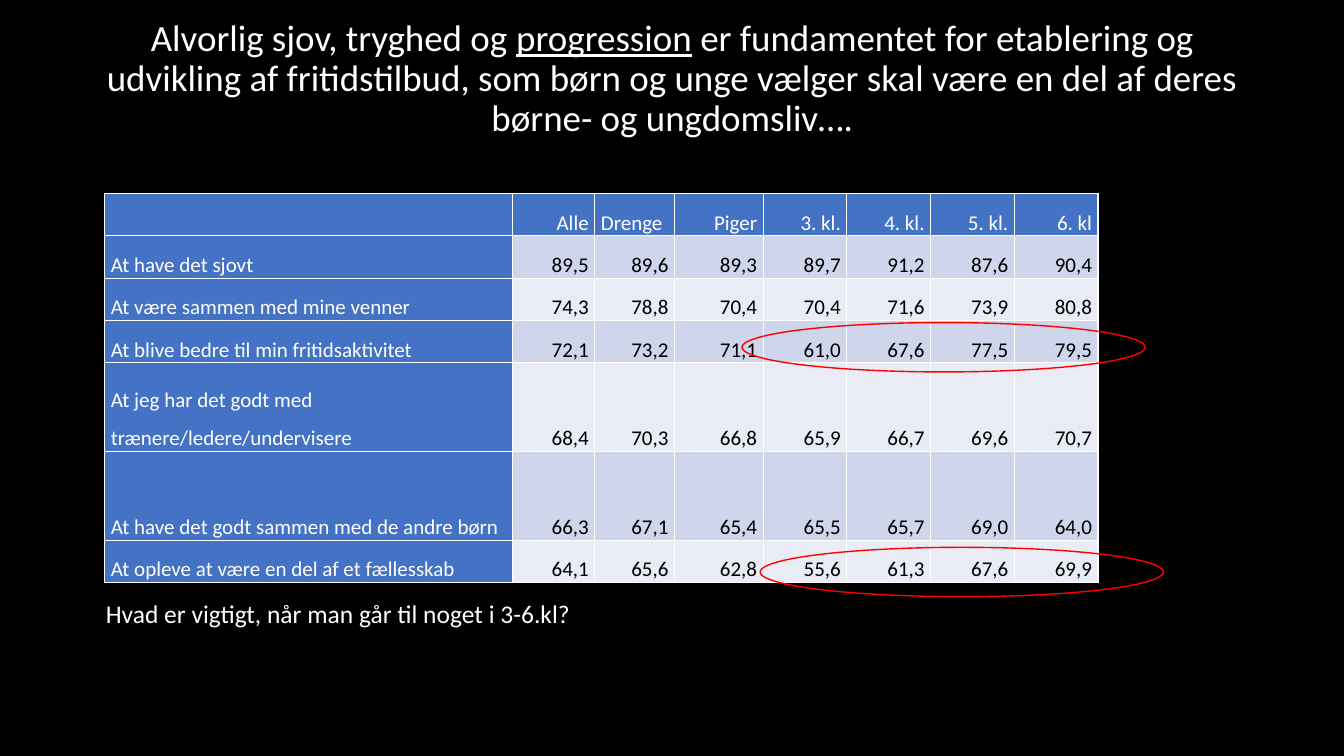
"""Build a slide with a table of what children value in leisure activities."""
from lxml import etree
from pptx import Presentation
from pptx.dml.color import RGBColor
from pptx.enum.shapes import MSO_SHAPE
from pptx.enum.text import MSO_ANCHOR, MSO_AUTO_SIZE, PP_ALIGN
from pptx.oxml.ns import qn
from pptx.util import Inches, Pt

OVAL = MSO_SHAPE.OVAL
MIDDLE, BOTTOM = MSO_ANCHOR.MIDDLE, MSO_ANCHOR.BOTTOM
LEFT, CENTER, RIGHT = PP_ALIGN.LEFT, PP_ALIGN.CENTER, PP_ALIGN.RIGHT
FIXED = MSO_AUTO_SIZE.NONE

COLORS = {"black": "000000", "white": "FFFFFF", "blue": "4472C4",
          "dark": "CFD5EA", "light": "E9EBF5", "red": "FF0000"}

TITLE = [("Alvorlig sjov, tryghed og ", False), ("progression", True),
         (" er fundamentet for etablering og udvikling af fritidstilbud, som børn "
          "og unge vælger skal være en del af deres børne- og ungdomsliv….", False)]
HEADS = ["", "Alle", "Drenge", "Piger", "3. kl.", "4. kl.", "5. kl.", "6. kl"]
ROWS = [
    ("At have det sjovt", "89,5 89,6 89,3 89,7 91,2 87,6 90,4"),
    ("At være sammen med mine venner", "74,3 78,8 70,4 70,4 71,6 73,9 80,8"),
    ("At blive bedre til min fritidsaktivitet", "72,1 73,2 71,1 61,0 67,6 77,5 79,5"),
    ("At jeg har det godt med trænere/ledere/undervisere",
     "68,4 70,3 66,8 65,9 66,7 69,6 70,7"),
    ("At have det godt sammen med de andre børn",
     "66,3 67,1 65,4 65,5 65,7 69,0 64,0"),
    ("At opleve at være en del af et fællesskab",
     "64,1 65,6 62,8 55,6 61,3 67,6 69,9"),
]
WIDTHS = [30.31, 6.15, 5.93, 6.6] + [6.23] * 4
HEIGHTS = [5.6] * 4 + [11.75] * 2 + [5.6]


def color(name):
    """Return the named colour."""
    return RGBColor.from_string(COLORS[name])


def apply(obj, values):
    """Set each attribute in values on obj."""
    for key, value in values.items():
        setattr(obj, key, value)


class Deck:
    """Hold the font and slide; lengths are percent of the slide's size."""

    def __init__(self, font):
        """Start a deck with one black title-only slide."""
        self.font = font
        self.deck = Presentation()
        apply(self.deck, {"slide_width": Inches(13.33), "slide_height": Inches(7.5)})
        self.slide = self.deck.slides.add_slide(self.deck.slide_layouts[5])
        fill = self.slide.background.fill
        fill.solid()
        fill.fore_color.rgb = color("black")

    def wide(self, share):
        """Turn a share of the width into a length."""
        return round(self.deck.slide_width * share / 100)

    def high(self, share):
        """Turn a share of the height into a length."""
        return round(self.deck.slide_height * share / 100)

    def box(self, x, y, w, h):
        """Turn four shares into a position and size."""
        return self.wide(x), self.high(y), self.wide(w), self.high(h)

    def words(self, frame, runs, size, ink="white", **style):
        """Fill the first paragraph of a frame with (text, underline) runs."""
        para = frame.paragraphs[0]
        apply(para, style)
        for text, line in runs:
            run = para.add_run()
            run.text = text
            apply(run.font, {"name": self.font, "size": Pt(size),
                             "bold": False, "underline": line})
            run.font.color.rgb = color(ink)

    def title(self, spot, runs):
        """Place and fill the title placeholder."""
        shape = self.slide.shapes.title
        apply(shape, dict(zip(("left", "top", "width", "height"), self.box(*spot))))
        frame = shape.text_frame
        apply(frame, {"word_wrap": True, "auto_size": FIXED, "vertical_anchor": MIDDLE,
                      "margin_top": Inches(0.05), "margin_bottom": Inches(0.72)})
        self.words(frame, runs, 26.4, alignment=CENTER, line_spacing=0.9)

    def text(self, spot, label):
        """Add a text box."""
        frame = self.slide.shapes.add_textbox(*self.box(*spot)).text_frame
        apply(frame, {"word_wrap": True, "auto_size": FIXED, "vertical_anchor": MIDDLE,
                      "margin_left": Inches(0.13), "margin_right": Inches(0.13),
                      "margin_top": Inches(0.07), "margin_bottom": Inches(0.07)})
        self.words(frame, [(label, False)], 18.2, alignment=LEFT, line_spacing=0.9)

    def ring(self, spot):
        """Add a red outline oval."""
        shape = self.slide.shapes.add_shape(OVAL, *self.box(*spot))
        shape.shadow.inherit = False
        shape.fill.background()
        shape.line.color.rgb = color("red")
        shape.line.width = Pt(1)

    def edge(self, cell):
        """Give a cell thin white borders."""
        props = cell._tc.get_or_add_tcPr()
        for spot, side in enumerate(("lnL", "lnR", "lnT", "lnB")):
            line = etree.Element(qn("a:" + side), w=str(Pt(1)))
            fill = etree.SubElement(line, qn("a:solidFill"))
            etree.SubElement(fill, qn("a:srgbClr"), val=COLORS["white"])
            props.insert(spot, line)

    def cell(self, cell, label, back, ink, style):
        """Format and fill one table cell."""
        apply(cell, {"vertical_anchor": BOTTOM, "margin_top": 0, "margin_bottom": 0,
                     "margin_left": Inches(0.06), "margin_right": Inches(0.06)})
        cell.fill.solid()
        cell.fill.fore_color.rgb = color(back)
        self.edge(cell)
        if label:
            self.words(cell.text_frame, [(label, False)], 15, ink, **style)

    def table(self, x, y, heads, rows, widths, heights):
        """Add a table with a blue head row and column and banded values."""
        spot = self.box(x, y, sum(widths), sum(heights))
        grid = self.slide.shapes.add_table(len(heights), len(widths), *spot).table
        apply(grid, {"first_row": False, "horz_banding": False})
        for col, share in zip(grid.columns, widths):
            col.width = self.wide(share)
        for row, share in zip(grid.rows, heights):
            row.height = self.high(share)
        lines = [heads] + [[name] + values.split() for name, values in rows]
        for r, line in enumerate(lines):
            for c, label in enumerate(line):
                head = r == 0 or c == 0
                back = "blue" if head else "dark" if r % 2 else "light"
                style = {"alignment": RIGHT if c else LEFT,
                         "line_spacing": 1.5, "space_after": Pt(6)}
                if label == "Drenge":
                    style = {"alignment": LEFT}
                self.cell(grid.cell(r, c), label, back,
                          "white" if head else "black", style)


def main():
    """Build and save the slide."""
    deck = Deck("Calibri")
    deck.title((6.9, 5.33, 86.27, 19.33), TITLE)
    deck.table(7.8, 25.6, HEADS, ROWS, WIDTHS, HEIGHTS)
    deck.ring((55.21, 42.67, 30, 6.53))
    deck.text((6.9, 71.73, 86.27, 19.33),
              "Hvad er vigtigt, når man går til noget i 3-6.kl?")
    deck.ring((56.56, 72.4, 30, 6.53))
    deck.deck.save("out.pptx")


if __name__ == "__main__":
    main()
